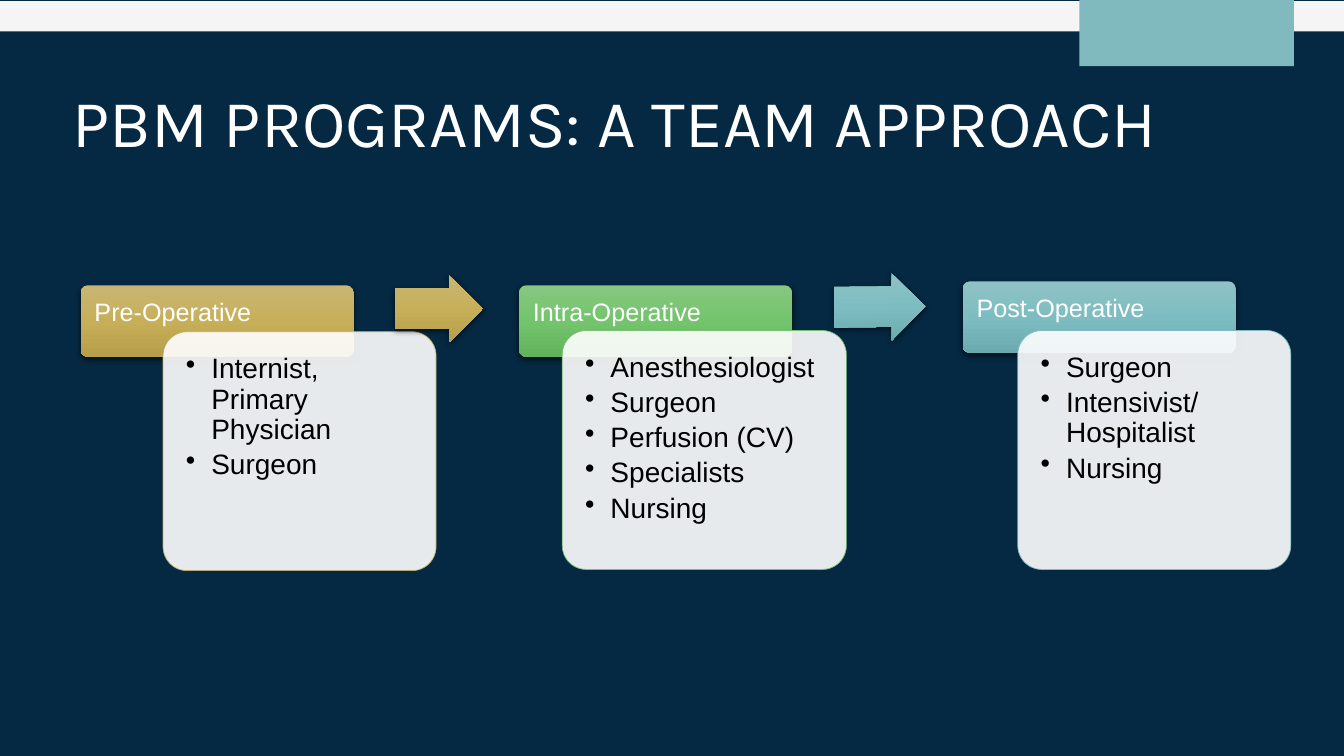
from dataclasses import dataclass

import pptx
import pptx.dml.color
import pptx.enum.shapes
import pptx.enum.text
import pptx.oxml
import pptx.oxml.ns
import pptx.util
from pptx.util import Cm

PRESET = pptx.enum.shapes.MSO_SHAPE
ANCHOR = pptx.enum.text.MSO_ANCHOR
ALIGN = pptx.enum.text.PP_ALIGN
NS = pptx.oxml.ns.nsdecls("a")


@dataclass(frozen=True)
class Theme:
    navy: str = "052942"
    band: str = "F5F5F5"
    teal: str = "80BABE"
    white: str = "FFFFFF"
    black: str = "000000"
    gold_line: str = "C2AC5F"
    green_line: str = "76C070"
    gold_blend: tuple = ("C9B574", "C7AF5A", "B69E4A")
    green_blend: tuple = ("87C782", "73C46C", "62B25B")
    teal_blend: tuple = ("8FC2C6", "7DBDC1", "6BABAF")
    title_font: str = "Karla"
    body_font: str = "Arial"
    title_size: int = 48
    header_size: int = 18
    body_size: int = 20


THEME = Theme()


@dataclass(frozen=True)
class Stage:
    name: str
    roles: tuple
    blend: tuple
    outline: str
    header_at: tuple
    card_at: tuple
    card_width: float = 6.88


STAGES = (
    Stage("Pre-Operative", ("Internist, Primary Physician", "Surgeon"),
          THEME.gold_blend, THEME.gold_line, (2.03, 7.19), (4.11, 8.36)),
    Stage("Intra-Operative",
          ("Anesthesiologist", "Surgeon", "Perfusion (CV)", "Specialists", "Nursing"),
          THEME.green_blend, THEME.green_line, (13.08, 7.19), (14.17, 8.33), 7.16),
    Stage("Post-Operative", ("Surgeon", "Intensivist/ Hospitalist", "Nursing"),
          THEME.teal_blend, THEME.teal, (24.26, 7.09), (25.65, 8.33)),
)


def rgb(color):
    return pptx.dml.color.RGBColor.from_string(color)


def add_block(slide, preset, left, top, width, height, fill=None):
    block = slide.shapes.add_shape(preset, Cm(left), Cm(top), Cm(width), Cm(height))
    block.shadow.inherit = False
    block.line.fill.background()
    if fill:
        block.fill.solid()
        block.fill.fore_color.rgb = rgb(fill)
    return block


def add_raised_block(slide, preset, left, top, width, height, blend):
    """Add a block with a vertical three-colour gradient and a soft drop shadow."""
    block = add_block(slide, preset, left, top, width, height)
    stops = "".join(
        f'<a:gs pos="{position}"><a:srgbClr val="{color}"/></a:gs>'
        for position, color in zip((0, 50000, 100000), blend))
    properties = block.fill._xPr
    properties.find(pptx.oxml.ns.qn("a:prstGeom")).addnext(pptx.oxml.parse_xml(
        f'<a:gradFill {NS} rotWithShape="1"><a:gsLst>{stops}</a:gsLst>'
        '<a:lin ang="5400000" scaled="0"/></a:gradFill>'))
    properties.find(pptx.oxml.ns.qn("a:effectLst")).append(pptx.oxml.parse_xml(
        f'<a:outerShdw {NS} blurRad="57150" dist="19050" dir="5400000" algn="ctr"'
        f' rotWithShape="0"><a:srgbClr val="{THEME.black}"><a:alpha val="63000"/>'
        '</a:srgbClr></a:outerShdw>'))
    return block


def make_bullet(paragraph):
    properties = paragraph._p.get_or_add_pPr()
    properties.set("marL", str(Cm(0.64)))
    properties.set("indent", str(-Cm(0.64)))
    properties.append(pptx.oxml.parse_xml(f'<a:buChar {NS} char="•"/>'))


def write(shape, lines, *, size, color, font=THEME.body_font, insets=(0.25, 0.13, 0.25, 0.13),
          anchor=ANCHOR.TOP, space_after=0, bullets=False):
    """Fill the shape with one paragraph per line; insets are left, top, right, bottom in cm."""
    frame = shape.text_frame
    frame.word_wrap = True
    frame.vertical_anchor = anchor
    (frame.margin_left, frame.margin_top,
     frame.margin_right, frame.margin_bottom) = map(Cm, insets)
    for index, line in enumerate(lines):
        paragraph = frame.add_paragraph() if index else frame.paragraphs[0]
        paragraph.alignment = ALIGN.LEFT
        paragraph.line_spacing = 0.9
        paragraph.space_after = pptx.util.Pt(space_after)
        if bullets:
            make_bullet(paragraph)
        run = paragraph.add_run()
        run.text = line
        run.font.name = font
        run.font.size = pptx.util.Pt(size)
        run.font.color.rgb = rgb(color)


def add_title(slide, title):
    box = slide.shapes.add_textbox(Cm(1.57), Cm(2.11), Cm(31.04), Cm(2.11))
    write(box, [title], size=THEME.title_size, color=THEME.white,
          font=THEME.title_font, anchor=ANCHOR.MIDDLE)


def add_stage(slide, stage):
    header = add_raised_block(slide, PRESET.ROUNDED_RECTANGLE, *stage.header_at,
                              6.88, 1.8, stage.blend)
    header.adjustments[0] = 0.1
    write(header, [stage.name], size=THEME.header_size, color=THEME.white,
          insets=(0.3, 0.3, 0.3, 0.18))

    card = add_block(slide, PRESET.ROUNDED_RECTANGLE, *stage.card_at,
                     stage.card_width, 6.02, THEME.white)
    card.adjustments[0] = 0.1
    color = card.fill._xPr.find(pptx.oxml.ns.qn("a:solidFill"))[0]
    color.append(pptx.oxml.parse_xml(f'<a:alpha {NS} val="90000"/>'))
    card.line.color.rgb = rgb(stage.outline)
    card.line.width = pptx.util.Pt(0.5)
    write(card, stage.roles, size=THEME.body_size, color=THEME.black,
          insets=(0.4, 0.4, 0.4, 0.4), space_after=3.5, bullets=True)


def add_arrow(slide, left, top, width, blend, rotation=0):
    arrow = add_raised_block(slide, PRESET.RIGHT_ARROW, left, top, width, 1.7, blend)
    arrow.adjustments[0] = 0.6
    arrow.adjustments[1] = 0.5
    arrow.rotation = rotation


def main():
    deck = pptx.Presentation()
    deck.slide_width, deck.slide_height = Cm(33.87), Cm(19.05)
    slide = deck.slides.add_slide(deck.slide_layouts[6])
    slide.background.fill.solid()
    slide.background.fill.fore_color.rgb = rgb(THEME.navy)

    add_block(slide, PRESET.RECTANGLE, 0, 0.03, 33.87, 0.76, THEME.band)
    add_block(slide, PRESET.RECTANGLE, 27.2, -0.03, 5.41, 1.7, THEME.teal)
    add_title(slide, "PBM PROGRAMS: A TEAM APPROACH")

    before, during, after = STAGES
    add_stage(slide, before)
    add_arrow(slide, 9.96, 6.93, 2.21, before.blend)
    add_stage(slide, during)
    add_arrow(slide, 21.03, 6.88, 2.29, after.blend, rotation=359.5)
    add_stage(slide, after)

    deck.save("out.pptx")


if __name__ == "__main__":
    main()
